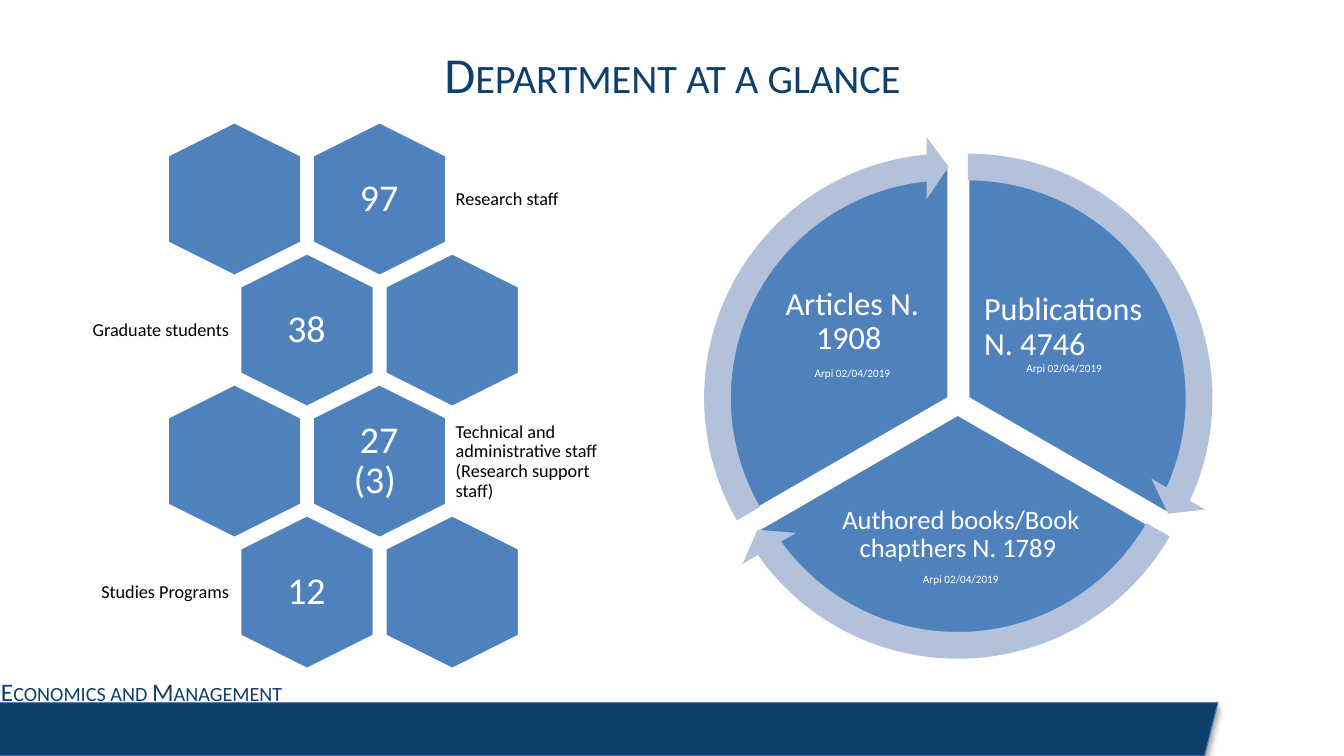
from lxml.etree import SubElement
from pptx import Presentation
from pptx.dml.color import RGBColor
from pptx.enum.shapes import MSO_SHAPE
from pptx.enum.text import MSO_ANCHOR, PP_ALIGN
from pptx.oxml.ns import qn
from pptx.util import Pt

PX = 9144
NAVY, BLUE, PALE, WHITE, BLACK = "0F406B", "4F81BD", "B3C1DB", "FFFFFF", "000000"
LEFT, MID, RIGHT = PP_ALIGN.LEFT, PP_ALIGN.CENTER, PP_ALIGN.RIGHT

STAFF = [
    ("97", "Research staff"),
    ("38", "Graduate students"),
    ("27 (3) ", "Technical and administrative staff (Research support staff)"),
    ("12", "Studies Programs"),
]
DATE = ("Arpi 02/04/2019", 8, MID, 0)
# pie offset, start and end in degrees, text box in the wheel, lines
WORKS = [
    ((48, 29), 270, 30, (292, 127, 165, 138),
     [("Publications N. 4746", 23, LEFT, 0), DATE]),
    ((38, 45), 30, 150, (148, 346, 248, 121),
     [("Authored books/Book chapthers N. 1789 ", 19, MID, 7), DATE]),
    ((29, 29), 150, 270, (82, 127, 165, 138),
     [("Articles N. 1908 ", 23, MID, 8), DATE]),
]


def color(value):
    return RGBColor.from_string(value)


def emu(box):
    return [v * PX for v in box]


def assign(item, form):
    for name, value in form.items():
        setattr(item, name, value)


def shape(slide, kind, box, fill, line=None, width=2, adjust=(), turn=0):
    item = slide.shapes.add_shape(kind, *emu(box))
    item.shadow.inherit = False
    item.rotation = turn
    item.fill.solid()
    item.fill.fore_color.rgb = color(fill)
    if line:
        item.line.color.rgb = color(line)
        item.line.width = Pt(width)
    else:
        item.line.fill.background()
    for i, value in enumerate(adjust):
        item.adjustments[i] = value
    return item


def text(slide, box, lines, tint, pad=5, ratio=0.9, small=False,
         wrap=True, anchor=MSO_ANCHOR.MIDDLE):
    """Lines hold wording, size, alignment and space after in points."""
    frame = slide.shapes.add_textbox(*emu(box)).text_frame
    sides = ("left", "top", "right", "bottom")
    assign(frame, {"margin_" + side: pad * PX for side in sides})
    assign(frame, {"word_wrap": wrap, "vertical_anchor": anchor})
    for i, (words, size, align, after) in enumerate(lines):
        para = frame.add_paragraph() if i else frame.paragraphs[0]
        assign(para, {"alignment": align, "line_spacing": ratio,
                      "space_after": Pt(after)})
        run = para.add_run()
        run.text = words
        assign(run.font, {"name": "Calibri", "size": Pt(size)})
        run.font.color.rgb = color(tint)
        if small:
            run.font._element.set("cap", "small")


def title(slide, box):
    text(slide, box, [("Department at a glance", 36, MID, 0)], NAVY,
         pad=10, ratio=1, small=True)


def footer(slide, box):
    """Department name standing on a band with a soft shadow."""
    x, y, w, h = box
    band = shape(slide, MSO_SHAPE.PARALLELOGRAM, box, NAVY, "4B7EBC", 0.75)
    effects = band._element.spPr.find(qn("a:effectLst"))
    glow = SubElement(effects, qn("a:outerShdw"), blurRad=str(Pt(3.1)),
                      dist=str(Pt(1.8)), dir="5400000", rotWithShape="0")
    tone = SubElement(glow, qn("a:srgbClr"), val=BLACK)
    SubElement(tone, qn("a:alpha"), val="35000")
    text(slide, (x + 12, y - 31, 304, 40),
         [("Economics and Management", 18, LEFT, 0)], NAVY, pad=5, ratio=1,
         small=True, wrap=False, anchor=MSO_ANCHOR.TOP)


def comb(slide, box):
    """Staggered hexagons, one figure and one label per row."""
    left, top, wide, high = box
    step = high // len(STAFF)
    for row, (count, label) in enumerate(STAFF):
        odd = row % 2
        x, y = left + 89 + 72 * odd, top + step * row
        for col in range(2):
            shape(slide, MSO_SHAPE.HEXAGON, (x + 144 * col, y, 153, 133),
                  BLUE, WHITE, adjust=(0.25, 1.155), turn=90)
        cell = x if odd else x + 144
        text(slide, (cell + 30, y + 14, 92, 105), [(count, 27, MID, 0)],
             WHITE, pad=11)
        start, span = (left, 165) if odd else (cell + 147, 171)
        text(slide, (start, y + 21, span, 92),
             [(label, 13, RIGHT if odd else LEFT, 0)], BLACK)


def wheel(slide, box):
    """Three pie parts, each with an arrow around its rim."""
    left, top, size, _ = box
    rim = 29
    for (dx, dy), start, end, (tx, ty, w, h), lines in WORKS:
        shape(slide, MSO_SHAPE.PIE,
              (left + dx, top + dy, size - 2 * rim, size - 2 * rim),
              BLUE, WHITE, adjust=(start * 0.6, end * 0.6))
        text(slide, (left + tx, top + ty, w, h), lines, WHITE, pad=3)
    for (dx, dy), start, end, *_ in WORKS:
        shape(slide, MSO_SHAPE.CIRCULAR_ARROW,
              (left + dx - rim, top + dy - rim, size, size), PALE,
              adjust=(0.051, 3.275, end * 0.6 - 3.275, start * 0.6, 0.059))


def main():
    deck = Presentation()
    assign(deck, {"slide_width": 1333 * PX, "slide_height": 750 * PX})
    slide = deck.slides.add_slide(deck.slide_layouts[6])
    footer(slide, (-16, 697, 1224, 53))
    title(slide, (67, 30, 1200, 86))
    comb(slide, (67, 131, 551, 520))
    wheel(slide, (681, 135, 520, 520))
    deck.save("out.pptx")


if __name__ == "__main__":
    main()
